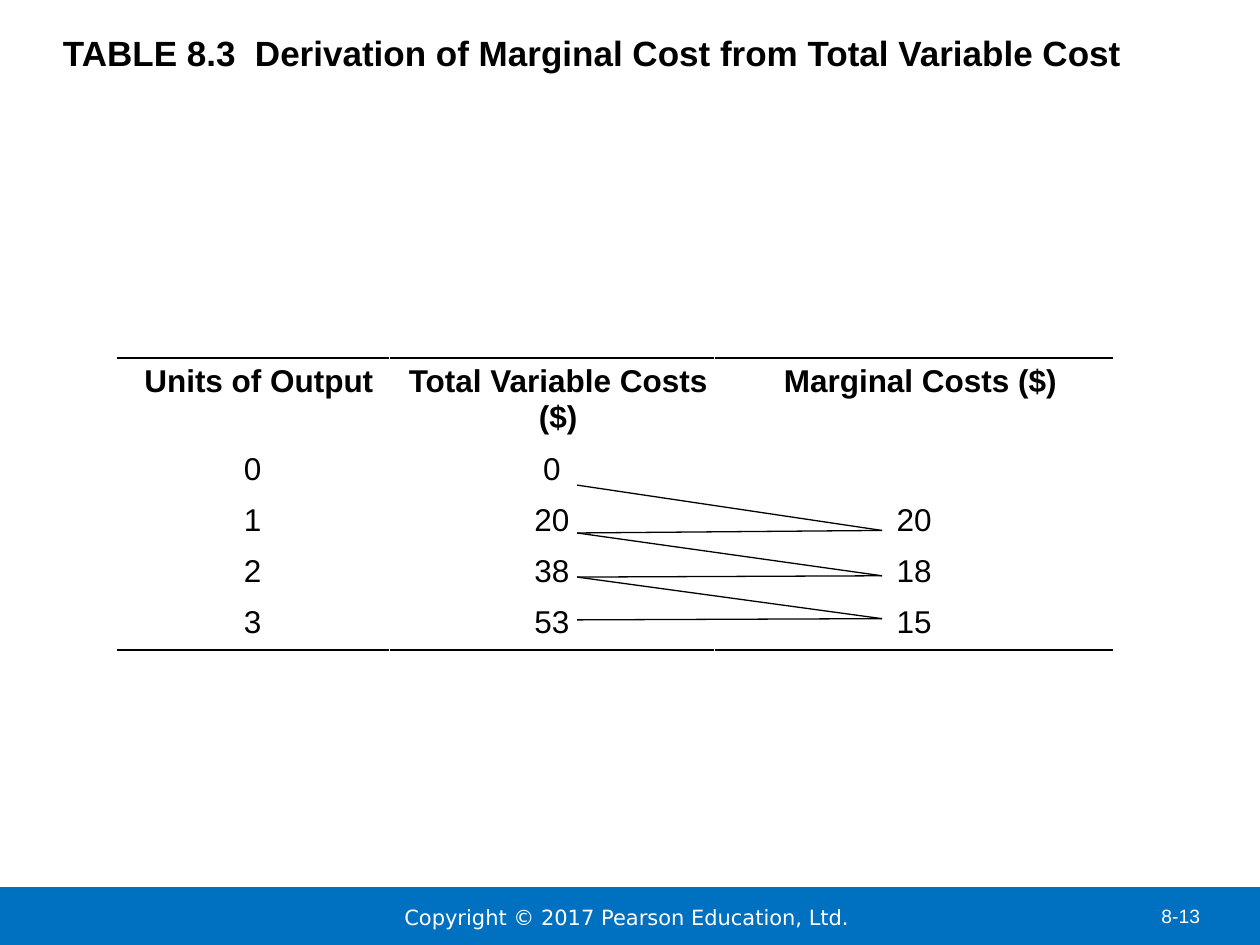
from dataclasses import dataclass

from lxml.etree import SubElement
from pptx import Presentation
from pptx.dml.color import RGBColor
from pptx.enum.shapes import MSO_CONNECTOR, MSO_SHAPE
from pptx.enum.text import MSO_ANCHOR, PP_ALIGN
from pptx.oxml import parse_xml
from pptx.oxml.ns import nsdecls, qn
from pptx.util import Inches, Pt


@dataclass(frozen=True)
class Theme:
    ink: str = "000000"
    paper: str = "FFFFFF"
    band: str = "0070C0"
    font: str = "Arial"
    footer_font: str = "DejaVu Sans"
    title_size: int = 20
    table_size: int = 18
    footer_size: int = 12
    number_size: int = 11
    border: float = 1
    thread: float = 0.75


THEME = Theme()

COST_ROWS = [
    ("Units of Output", "Total Variable Costs ($)", "Marginal Costs ($)"),
    ("0", "0", ""),
    ("1", "20", "20"),
    ("2", "38", "18"),
    ("3", "53", "15"),
]
COLUMN_WIDTHS = (2.17, 2.58, 3.17)
HEADER_HEIGHT = 0.67
TOTAL_COST_HEIGHTS = (3.85, 4.23, 4.58, 4.92)
MARGINAL_COST_HEIGHTS = (4.21, 4.57, 4.91)


def write(frame, text, size, color, font=THEME.font, bold=False, align=PP_ALIGN.LEFT):
    paragraph = frame.paragraphs[0]
    paragraph.text = text
    paragraph.alignment = align
    paragraph.font.name = font
    paragraph.font.size = Pt(size)
    paragraph.font.bold = bold
    paragraph.font.color.rgb = RGBColor.from_string(color)


def add_text(slide, box, text, size, color, inset=0.0, **style):
    frame = slide.shapes.add_textbox(*map(Inches, box)).text_frame
    frame.word_wrap = True
    frame.margin_left = frame.margin_right = Inches(inset)
    frame.margin_top = frame.margin_bottom = Inches(inset / 2)
    write(frame, text, size, color, **style)
    return frame


def add_footer(slide, box):
    left, top, width, height = box
    band = slide.shapes.add_shape(MSO_SHAPE.RECTANGLE, *map(Inches, box))
    band.shadow.inherit = False
    band.fill.solid()
    band.fill.fore_color.rgb = RGBColor.from_string(THEME.band)
    band.line.fill.background()
    add_text(slide, (left + width - 0.89, top + 0.09, 0.76, 0.29), "8-13",
             THEME.number_size, THEME.paper, inset=0.1)
    credit = add_text(slide, (left + 1.53, top + 0.01, 6.91, 0.45),
                      "Copyright © 2017 Pearson Education, Ltd.",
                      THEME.footer_size, THEME.paper,
                      font=THEME.footer_font, align=PP_ALIGN.CENTER)
    credit.vertical_anchor = MSO_ANCHOR.MIDDLE


def set_borders(cell, colors):
    """Draw the left, right, top and bottom edges; None leaves an edge bare."""
    properties = cell._tc.get_or_add_tcPr()
    for index, (side, color) in enumerate(zip("LRTB", colors)):
        edge = parse_xml(f'<a:ln{side} {nsdecls("a")} w="{Pt(THEME.border)}"/>')
        if color:
            fill = SubElement(edge, qn("a:solidFill"))
            SubElement(fill, qn("a:srgbClr"), val=color)
        else:
            SubElement(edge, qn("a:noFill"))
        properties.insert(index, edge)


def add_cost_table(slide, box):
    last = len(COST_ROWS) - 1
    table = slide.shapes.add_table(
        len(COST_ROWS), len(COLUMN_WIDTHS), *map(Inches, box)).table
    table.first_row = table.horz_banding = False
    for column, width in zip(table.columns, COLUMN_WIDTHS):
        column.width = Inches(width)
    body_height = (box[3] - HEADER_HEIGHT) / last
    for row_index, values in enumerate(COST_ROWS):
        is_header = row_index == 0
        is_last = row_index == last
        table.rows[row_index].height = Inches(HEADER_HEIGHT if is_header else body_height)
        for column_index, value in enumerate(values):
            cell = table.cell(row_index, column_index)
            cell.fill.background()
            side = THEME.paper if is_header or is_last else None
            set_borders(cell, (side, side, THEME.ink if is_header else None,
                               THEME.ink if is_last else None))
            if is_header:
                cell.margin_right = 0
            write(cell.text_frame, value, THEME.table_size, THEME.ink,
                  bold=is_header, align=PP_ALIGN.CENTER)


def add_cost_threads(slide, left, right):
    """Join each pair of successive total costs to the marginal cost between them."""
    pairs = zip(TOTAL_COST_HEIGHTS, TOTAL_COST_HEIGHTS[1:])
    for totals, marginal in zip(pairs, MARGINAL_COST_HEIGHTS):
        for total in totals:
            thread = slide.shapes.add_connector(
                MSO_CONNECTOR.STRAIGHT, Inches(left), Inches(total),
                Inches(right), Inches(marginal))
            thread.line.color.rgb = RGBColor.from_string(THEME.ink)
            thread.line.width = Pt(THEME.thread)
            SubElement(thread._element.spPr, qn("a:effectLst"))


def main():
    presentation = Presentation()
    presentation.slide_width = Inches(10)
    presentation.slide_height = Inches(7.5)
    slide = presentation.slides.add_slide(presentation.slide_layouts[6])
    add_footer(slide, (-0.01, 7.04, 10.02, 0.47))
    add_text(slide, (0.5, 0.25, 9, 1.17),
             "TABLE 8.3  Derivation of Marginal Cost from Total Variable Cost",
             THEME.title_size, THEME.ink, bold=True)
    add_cost_table(slide, (0.92, 2.84, sum(COLUMN_WIDTHS), 2.29))
    add_cost_threads(slide, 4.58, 7)
    presentation.save("out.pptx")


if __name__ == "__main__":
    main()
